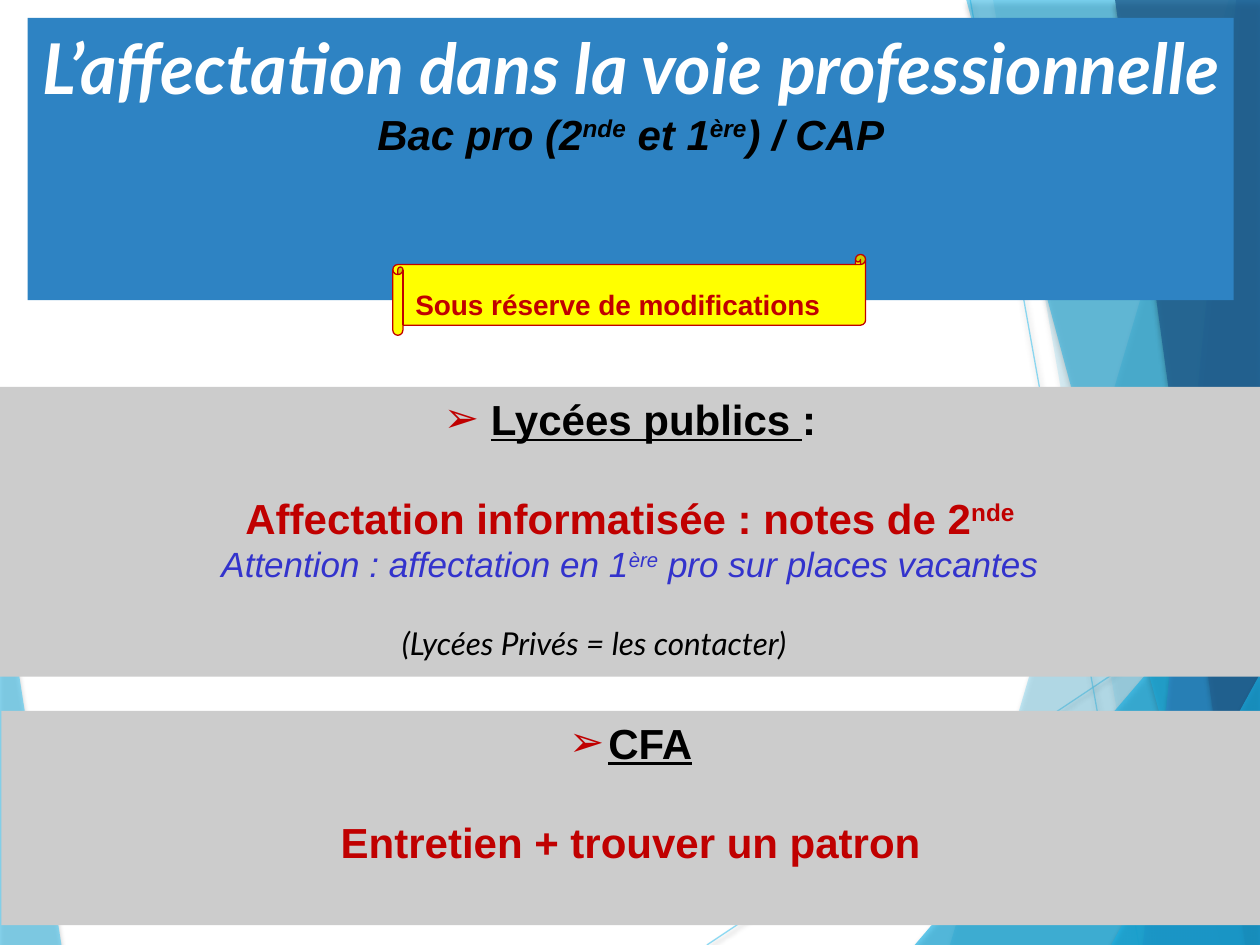
from lxml import etree
from pptx import Presentation
from pptx.dml.color import RGBColor
from pptx.enum.shapes import MSO_CONNECTOR, MSO_SHAPE
from pptx.enum.text import MSO_ANCHOR, PP_ALIGN
from pptx.oxml.ns import qn
from pptx.util import Cm, Pt

RECT, SCROLL = MSO_SHAPE.RECTANGLE, MSO_SHAPE.HORIZONTAL_SCROLL
STRAIGHT = MSO_CONNECTOR.STRAIGHT
CENTER, LEFT, TOP = PP_ALIGN.CENTER, PP_ALIGN.LEFT, MSO_ANCHOR.TOP

W, H = 25.4, 19.05
SKY, CYAN, BLUE, NAVY = "5FCBEF", "17B0E4", "2E83C3", "226292"
RED, BLACK, GREY = "C00000", "000000", "CCCCCC"

LEFT_FACET = [(SKY, 70, [(0, 11.15), (1.24, H), (0, H)])]
RAYS = [((14.25, H), (W, 11.61)), ((19.56, 0), (22.96, H))]
RIGHT_FACETS = [
    (SKY, 36, [(24.77, 0), (19.15, H), (W, H), (W, 0)]),
    (SKY, 20, [(20.02, 0), (23.34, H), (W, H), (W, 0)]),
    (CYAN, 66, [(18.44, H), (W, 10.9), (W, H)]),
    (CYAN, 50, [(19.48, 0), (24.64, H), (W, H), (W, 0)]),
    (BLUE, 70, [(24.92, 0), (23.04, H), (W, H), (W, 0)]),
    (NAVY, 82, [(22.48, 0), (25.1, H), (W, H), (W, 0)]),
    (CYAN, 66, [(22.4, H), (W, 13.59), (W, H)]),
]

HEAD = dict(size=24, color=BLACK, bold=True)
HEAD_LINE = dict(HEAD, underline=True)
KEY = dict(HEAD, color=RED)
SUB = dict(HEAD, italic=True)
NOTE = dict(size=20, color="3333CC", italic=True)
TITLE = dict(font="Lato", size=40, color="FFFFFF", bold=True, italic=True)
PRIVATE = dict(font="Lato", size=18, color=BLACK, italic=True)
WARNING = dict(size=16, color=RED, bold=True)


def sup(style):
    return dict(style, raised=True)


BOXES = [
    dict(at=(0.03, 14.33, 25.37, 4.32), shape=RECT, fill=GREY, paras=[
        dict(bullet=0.79, runs=[("CFA", HEAD_LINE)]),
        dict(before=28, runs=[("Entretien + trouver un patron", KEY)]),
    ]),
    dict(at=(0, 7.8, W, 5.84), shape=RECT, fill=GREY, paras=[
        dict(bullet=0.95, runs=[("Lycées publics ", HEAD_LINE), (":", HEAD)]),
        dict(before=28, runs=[("Affectation informatisée : notes de 2", KEY),
                              ("nde", sup(KEY))]),
        dict(runs=[("Attention : affectation en 1", NOTE), ("ère", sup(NOTE)),
                   (" pro sur places vacantes", NOTE)]),
    ]),
    dict(at=(0.56, 0.36, 24.31, 5.69), shape=RECT, fill=BLUE, paras=[
        dict(runs=[("L’affectation dans la voie professionnelle", TITLE)]),
        dict(runs=[("Bac pro (2", SUB), ("nde", sup(SUB)), (" et 1", SUB),
                   ("ère", sup(SUB)), (") / CAP", SUB)]),
    ]),
    dict(at=(7.92, 5.13, 9.53, 1.63), shape=SCROLL, fill="FFFF00", line=RED, paras=[
        dict(align=LEFT, spacing=1.5, runs=[("Sous réserve de modifications", WARNING)]),
    ]),
    dict(at=(7.85, 12.45, 9.6, 1.78), paras=[
        dict(align=LEFT, runs=[("(Lycées Privés = les contacter)", PRIVATE)]),
    ]),
]


def rgb(value):
    return RGBColor.from_string(value)


def sub(parent, tag, **attrs):
    return etree.SubElement(parent, qn(tag), {k: str(v) for k, v in attrs.items()})


def set_alpha(fill_element, percent):
    sub(fill_element.find(qn("a:srgbClr")), "a:alpha", val=percent * 1000)


def add_shadow(sp, blur, dist, percent):
    spPr = sp._element.spPr
    for old in spPr.findall(qn("a:effectLst")):
        spPr.remove(old)
    shadow = sub(sub(spPr, "a:effectLst"), "a:outerShdw", blurRad=Pt(blur),
                 dist=Pt(dist), dir=5400000, rotWithShape=0)
    sub(sub(shadow, "a:srgbClr", val=BLACK), "a:alpha", val=percent * 1000)


def add_facet(s, color, opacity, points):
    pts = [(Cm(x), Cm(y)) for x, y in points]
    builder = s.shapes.build_freeform(*pts[0], scale=1.0)
    builder.add_line_segments(pts[1:], close=True)
    sp = builder.convert_to_shape()
    sp.fill.solid()
    sp.fill.fore_color.rgb = rgb(color)
    set_alpha(sp._element.spPr.find(qn("a:solidFill")), opacity)
    sp.line.fill.background()
    add_shadow(sp, 3, 2, 35)


def add_ray(s, start, end):
    cx = s.shapes.add_connector(STRAIGHT, *[Cm(v) for v in start + end])
    cx.line.color.rgb = rgb(SKY)
    cx.line.width = Pt(0.75)
    set_alpha(cx.line._ln.find(qn("a:solidFill")), 70)
    add_shadow(cx, 3.1, 1.6, 38)


def add_run(p, text, style):
    r = p.add_run()
    r.text = text
    f = r.font
    f.name = style.get("font", "Arial")
    f.size = Pt(style["size"])
    f.color.rgb = rgb(style["color"])
    f.bold = style.get("bold", False)
    f.italic = style.get("italic", False)
    f.underline = style.get("underline", False)
    if style.get("raised"):
        f._element.set("baseline", "30000")


def add_bullet(p, indent):
    pPr = p._p.get_or_add_pPr()
    pPr.set("marL", str(Cm(indent)))
    pPr.set("indent", str(-Cm(indent)))
    sub(sub(pPr, "a:buClr"), "a:srgbClr", val=RED)
    sub(pPr, "a:buFont", typeface="Arial")
    sub(pPr, "a:buChar", char="➢")


def add_box(s, at, paras, shape=None, fill=None, line=None):
    place = [Cm(v) for v in at]
    if shape is None:
        sp = s.shapes.add_textbox(*place)
    else:
        sp = s.shapes.add_shape(shape, *place)
        sp.shadow.inherit = False
        sp.fill.solid()
        sp.fill.fore_color.rgb = rgb(fill)
        if line:
            sp.line.color.rgb = rgb(line)
            sp.line.width = Pt(0.75)
        else:
            sp.line.fill.background()
    tf = sp.text_frame
    tf.word_wrap = True
    tf.vertical_anchor = TOP
    for i, para in enumerate(paras):
        p = tf.add_paragraph() if i else tf.paragraphs[0]
        p.alignment = para.get("align", CENTER)
        if "before" in para:
            p.space_before = Pt(para["before"])
        if "spacing" in para:
            p.line_spacing = para["spacing"]
        if "bullet" in para:
            add_bullet(p, para["bullet"])
        for text, style in para["runs"]:
            add_run(p, text, style)


def main():
    prs = Presentation()
    prs.slide_width, prs.slide_height = Cm(W), Cm(H)
    s = prs.slides.add_slide(prs.slide_layouts[6])
    for facet in LEFT_FACET:
        add_facet(s, *facet)
    for ray in RAYS:
        add_ray(s, *ray)
    for facet in RIGHT_FACETS:
        add_facet(s, *facet)
    for box in BOXES:
        add_box(s, **box)
    prs.save("out.pptx")


if __name__ == "__main__":
    main()
